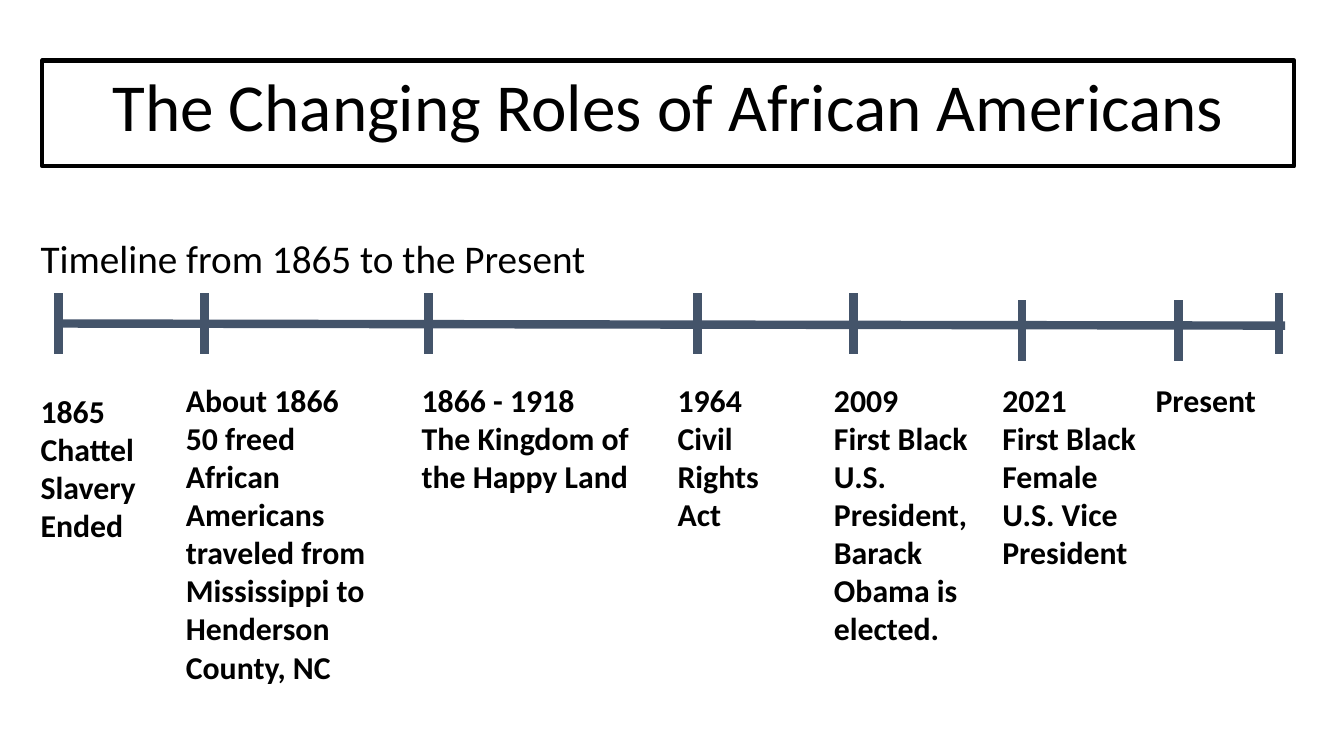
from dataclasses import dataclass

from lxml import etree
from pptx import Presentation
from pptx.dml.color import RGBColor
from pptx.enum.shapes import MSO_CONNECTOR
from pptx.enum.text import MSO_ANCHOR, MSO_AUTO_SIZE, PP_ALIGN
from pptx.oxml.ns import qn
from pptx.util import Pt

STRAIGHT = MSO_CONNECTOR.STRAIGHT
TOP = MSO_ANCHOR.TOP
NO_AUTOFIT = MSO_AUTO_SIZE.NONE
LEFT, CENTER = PP_ALIGN.LEFT, PP_ALIGN.CENTER
TITLE_ONLY = 5


@dataclass(frozen=True)
class Theme:
    font: str = "Calibri"
    text: RGBColor = RGBColor(0x00, 0x00, 0x00)
    timeline: RGBColor = RGBColor(0x44, 0x54, 0x6A)
    background: RGBColor = RGBColor(0xFF, 0xFF, 0xFF)
    title_size: float = 48
    subtitle_size: float = 28
    event_size: float = 22.7
    inset: float = 9.6
    border_width: float = 3
    timeline_width: float = 6


THEME = Theme()
TICK_HEIGHT = 43.2
TICK_TOP = 209.5
LOW_TICK_TOP = 214.5
EVENT_TOP = 262

TICKS = [
    (41.8, TICK_TOP),
    (146.2, TICK_TOP),
    (306, TICK_TOP),
    (498.2, TICK_TOP),
    (609.8, TICK_TOP),
    (730, LOW_TICK_TOP),
    (841.7, LOW_TICK_TOP),
    (913.7, TICK_TOP),
]

EVENTS = [
    (19.4, 270, 108, 129.6, ["1865", "Chattel Slavery", "Ended"]),
    (123.2, EVENT_TOP, 167.8, 239, [
        "About 1866",
        "50 freed African Americans traveled from Mississippi to Henderson County, NC",
    ]),
    (291.6, EVENT_TOP, 182.2, 101.5, ["1866 - 1918", "The Kingdom of the Happy Land"]),
    (474.4, EVENT_TOP, 108, 129.6, ["1964", "Civil Rights", "Act"]),
    (586.1, EVENT_TOP, 123.1, 211.7, [
        "2009", "First Black", "U.S.", "President, Barack Obama is elected.",
    ]),
    (706.3, EVENT_TOP, 123.1, 157, ["2021", "First Black", "Female", "U.S. Vice", "President"]),
    (815.8, EVENT_TOP, 123.1, 46.8, ["Present"]),
]


def write_text(shape, paragraphs, *, size, bold=False, align=LEFT, line_spacing=1.0):
    frame = shape.text_frame
    frame.word_wrap = True
    frame.auto_size = NO_AUTOFIT
    frame.vertical_anchor = TOP
    frame.margin_left = frame.margin_right = Pt(THEME.inset)
    frame.margin_top = frame.margin_bottom = Pt(THEME.inset)
    frame.text = "\n".join(paragraphs)
    for paragraph in frame.paragraphs:
        paragraph.alignment = align
        paragraph.line_spacing = line_spacing
        font = paragraph.runs[0].font
        font.name = THEME.font
        font.size = Pt(size)
        font.bold = bold
        font.color.rgb = THEME.text


def add_title(slide, text):
    title = slide.shapes.title
    title.left, title.top = Pt(30.2), Pt(43.2)
    title.width, title.height = Pt(894.2), Pt(75.6)
    title.line.color.rgb = THEME.text
    title.line.width = Pt(THEME.border_width)
    write_text(title, [text], size=THEME.title_size, align=CENTER, line_spacing=0.9)


def add_text_box(slide, left, top, width, height, paragraphs, **text_format):
    box = slide.shapes.add_textbox(Pt(left), Pt(top), Pt(width), Pt(height))
    write_text(box, paragraphs, **text_format)


def add_timeline_line(slide, start_x, start_y, end_x, end_y):
    line = slide.shapes.add_connector(
        STRAIGHT, Pt(start_x), Pt(start_y), Pt(end_x), Pt(end_y)
    )
    line.line.color.rgb = THEME.timeline
    line.line.width = Pt(THEME.timeline_width)
    etree.SubElement(line._element.spPr, qn("a:effectLst"))


def main():
    presentation = Presentation()
    presentation.slide_width, presentation.slide_height = Pt(960), Pt(540)
    slide = presentation.slides.add_slide(presentation.slide_layouts[TITLE_ONLY])
    slide.background.fill.solid()
    slide.background.fill.fore_color.rgb = THEME.background

    add_title(slide, "The Changing Roles of African Americans")
    add_text_box(
        slide, 19.4, 161.3, 907.9, 48, ["Timeline from 1865 to the Present"],
        size=THEME.subtitle_size, line_spacing=0.9,
    )
    add_timeline_line(slide, 42.5, 231.1, 918, 232.6)
    for x, top in TICKS:
        add_timeline_line(slide, x, top, x, top + TICK_HEIGHT)
    for left, top, width, height, paragraphs in EVENTS:
        add_text_box(
            slide, left, top, width, height, paragraphs,
            size=THEME.event_size, bold=True,
        )
    presentation.save("out.pptx")


if __name__ == "__main__":
    main()
